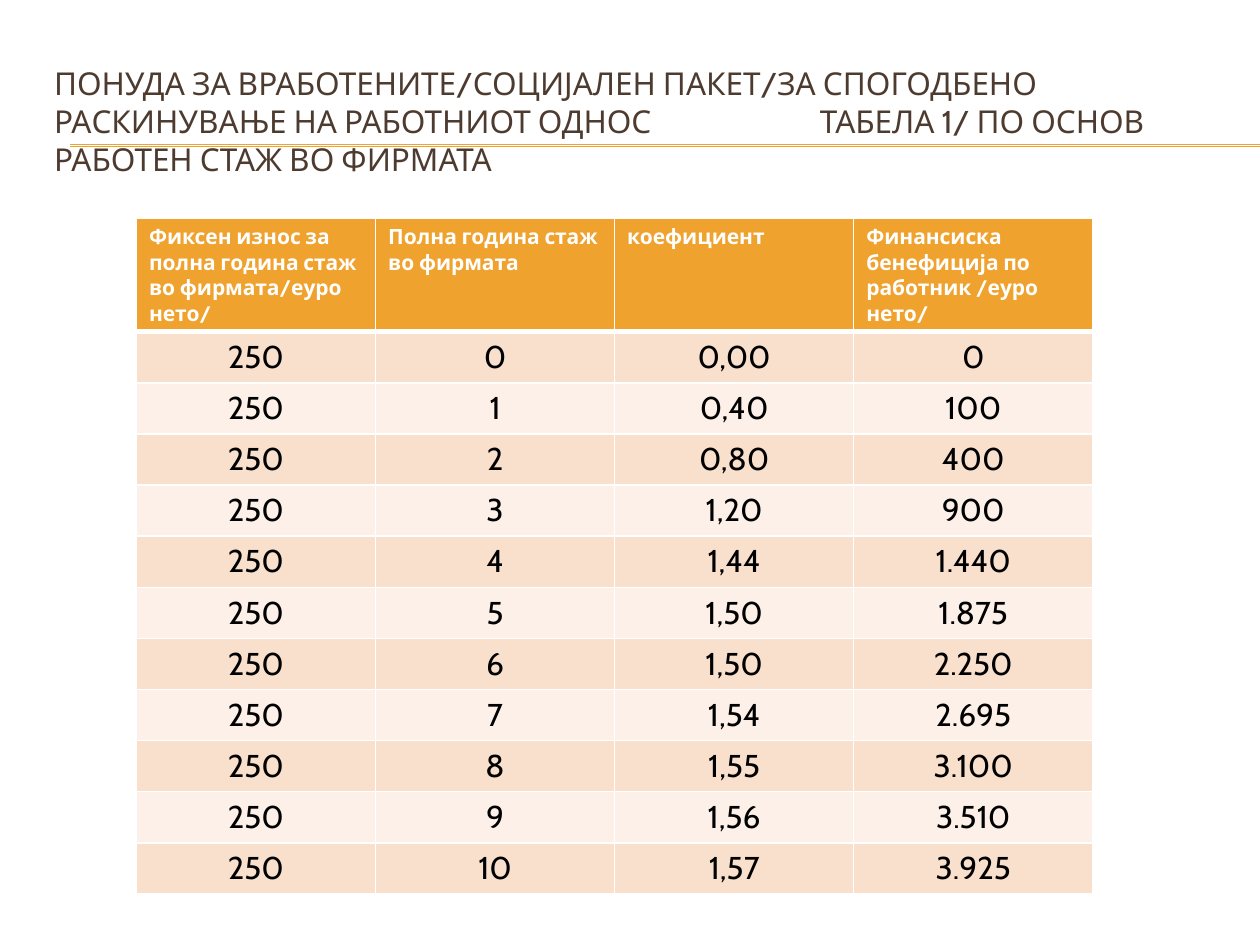
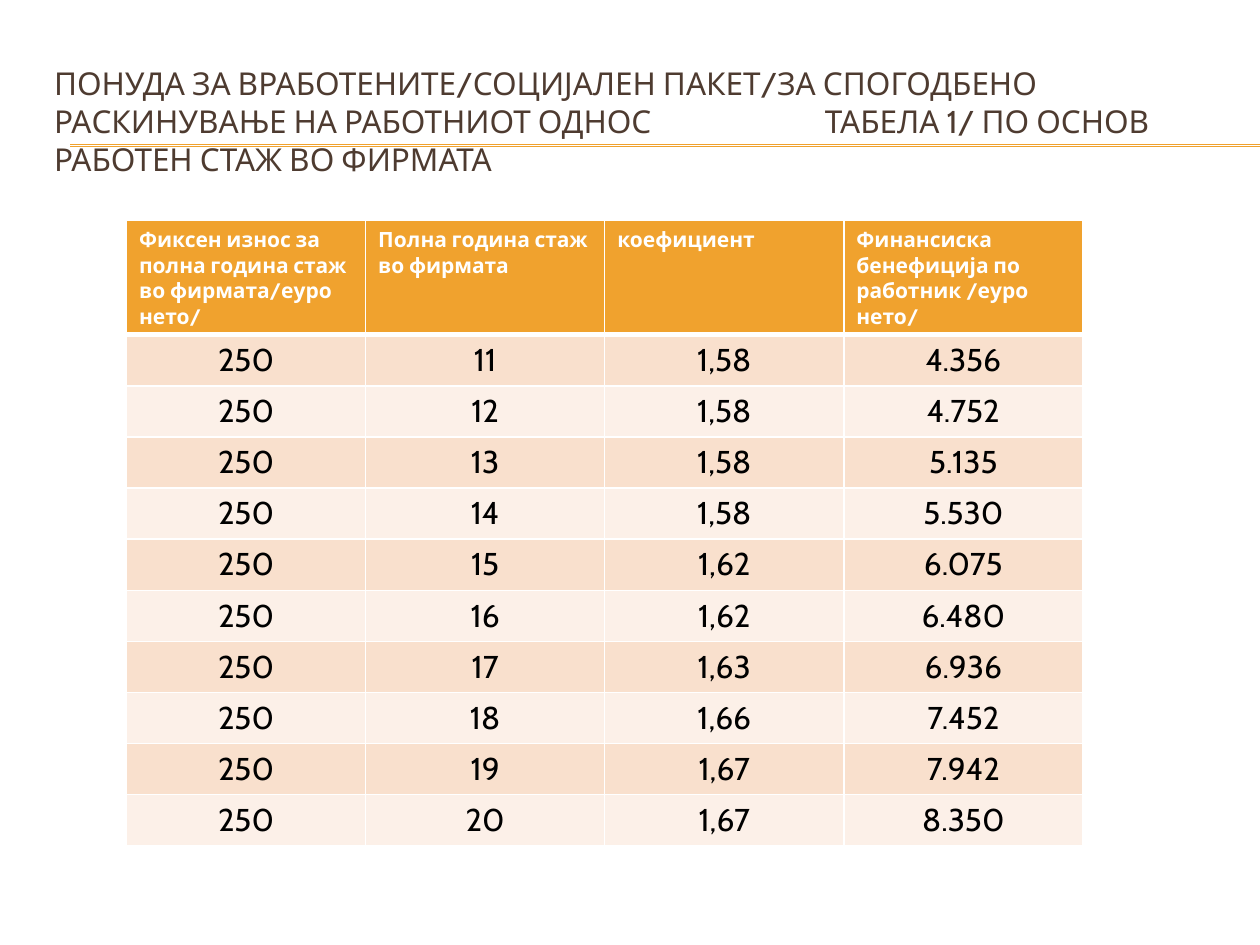
"""Build two slides with the severance offer by full years of service."""
from lxml import etree
from pptx import Presentation
from pptx.dml.color import RGBColor
from pptx.enum.shapes import MSO_CONNECTOR
from pptx.enum.text import MSO_ANCHOR, PP_ALIGN
from pptx.oxml.ns import qn
from pptx.util import Cm, Pt

STRAIGHT = MSO_CONNECTOR.STRAIGHT
MIDDLE = MSO_ANCHOR.MIDDLE
LEFT, CENTER = PP_ALIGN.LEFT, PP_ALIGN.CENTER

COLORS = {
    "accent": "F0A22E",
    "title": "4E3B30",
    "white": "FFFFFF",
    "black": "000000",
    "band_dark": "F9E0CD",
    "band_light": "FCF0E8",
}
FONT = "Cabin"
SLIDE_WIDTH, SLIDE_HEIGHT = 25.4, 19.05
COLUMN_WIDTH, HEADER_HEIGHT, ROW_HEIGHT = 4.82, 2.3, 1.03
FIXED_AMOUNT = "250"

TITLE = ("ПОНУДА ЗА ВРАБОТЕНИТЕ/СОЦИЈАЛЕН ПАКЕТ/ЗА СПОГОДБЕНО РАСКИНУВАЊЕ "
         "НА РАБОТНИОТ ОДНОС\tТАБЕЛА 1/ ПО ОСНОВ РАБОТЕН СТАЖ ВО ФИРМАТА")
HEADINGS = [
    "Фиксен износ за полна година стаж во фирмата/еуро нето/",
    "Полна година стаж во фирмата",
    "коефициент",
    "Финансиска бенефиција по работник /еуро нето/",
]
TABLES = [
    {"left": 2.75, "top": 4.39, "first_year": 0, "tab": 15.44, "benefits": [
        ("0,00", "0"), ("0,40", "100"), ("0,80", "400"), ("1,20", "900"),
        ("1,44", "1.440"), ("1,50", "1.875"), ("1,50", "2.250"),
        ("1,54", "2.695"), ("1,55", "3.100"), ("1,56", "3.510"),
        ("1,57", "3.925")]},
    {"left": 2.55, "top": 4.45, "first_year": 11, "tab": 15.54, "benefits": [
        ("1,58", "4.356"), ("1,58", "4.752"), ("1,58", "5.135"),
        ("1,58", "5.530"), ("1,62", "6.075"), ("1,62", "6.480"),
        ("1,63", "6.936"), ("1,66", "7.452"), ("1,67", "7.942"),
        ("1,67", "8.350")]},
]


def rgb(name):
    return RGBColor.from_string(COLORS[name])


def write_text(frame, text, *, size=18, color="black", bold=False, align=LEFT, tab=None):
    paragraph = frame.paragraphs[0]
    paragraph.alignment = align
    run = paragraph.add_run()
    run.text = text
    run.font.name, run.font.size, run.font.bold = FONT, Pt(size), bold
    run.font.color.rgb = rgb(color)
    if tab:
        stops = etree.SubElement(paragraph._p.get_or_add_pPr(), qn("a:tabLst"))
        etree.SubElement(stops, qn("a:tab"), pos=str(Cm(tab)), algn="l")


class Deck:
    def __init__(self):
        self.presentation = Presentation()
        self.presentation.slide_width = Cm(SLIDE_WIDTH)
        self.presentation.slide_height = Cm(SLIDE_HEIGHT)
        self.slide = None

    def add_slide(self):
        self.slide = self.presentation.slides.add_slide(self.presentation.slide_layouts[6])

    def rule(self, y):
        rule = self.slide.shapes.add_connector(STRAIGHT, Cm(1.42), Cm(y), Cm(SLIDE_WIDTH), Cm(y))
        rule.line.color.rgb = rgb("accent")
        rule.line.width = Pt(0.75)
        etree.SubElement(rule._element.spPr, qn("a:effectLst"))

    def title(self, text, tab):
        frame = self.slide.shapes.add_textbox(Cm(0.84), Cm(1.27), Cm(24.13), Cm(2.34)).text_frame
        frame.word_wrap = True
        frame.vertical_anchor = MIDDLE
        write_text(frame, text, color="title", tab=tab)

    def borders(self, cell, top=1, bottom=1):
        properties = cell._tc.get_or_add_tcPr()
        widths = {"L": 1, "R": 1, "T": top, "B": bottom}
        for index, (side, width) in enumerate(widths.items()):
            line = etree.Element(qn(f"a:ln{side}"), w=str(Pt(width)))
            fill = etree.SubElement(line, qn("a:solidFill"))
            etree.SubElement(fill, qn("a:srgbClr"), val=COLORS["white"])
            properties.insert(index, line)

    def cell(self, cell, text, fill, top=1, bottom=1, **text_format):
        cell.fill.solid()
        cell.fill.fore_color.rgb = rgb(fill)
        self.borders(cell, top, bottom)
        write_text(cell.text_frame, text, **text_format)

    def table(self, left, top, headings, rows):
        table = self.slide.shapes.add_table(
            len(rows) + 1, len(headings), Cm(left), Cm(top), Cm(COLUMN_WIDTH * len(headings)),
            Cm(HEADER_HEIGHT + ROW_HEIGHT * len(rows))).table
        for column in table.columns:
            column.width = Cm(COLUMN_WIDTH)
        table.rows[0].height = Cm(HEADER_HEIGHT)
        for column, heading in enumerate(headings):
            self.cell(table.cell(0, column), heading, "accent", bottom=3,
                      size=12, color="white", bold=True)
        for number, values in enumerate(rows, start=1):
            table.rows[number].height = Cm(ROW_HEIGHT)
            band = "band_dark" if number % 2 else "band_light"
            for column, value in enumerate(values):
                self.cell(table.cell(number, column), value, band,
                          top=3 if number == 1 else 1, align=CENTER)


def main():
    deck = Deck()
    for offer in TABLES:
        deck.add_slide()
        for y in (2.92, 2.95):
            deck.rule(y)
        deck.title(TITLE, offer["tab"])
        rows = [(FIXED_AMOUNT, str(year), coefficient, benefit)
                for year, (coefficient, benefit)
                in enumerate(offer["benefits"], start=offer["first_year"])]
        deck.table(offer["left"], offer["top"], HEADINGS, rows)
    deck.presentation.save("out.pptx")


if __name__ == "__main__":
    main()
